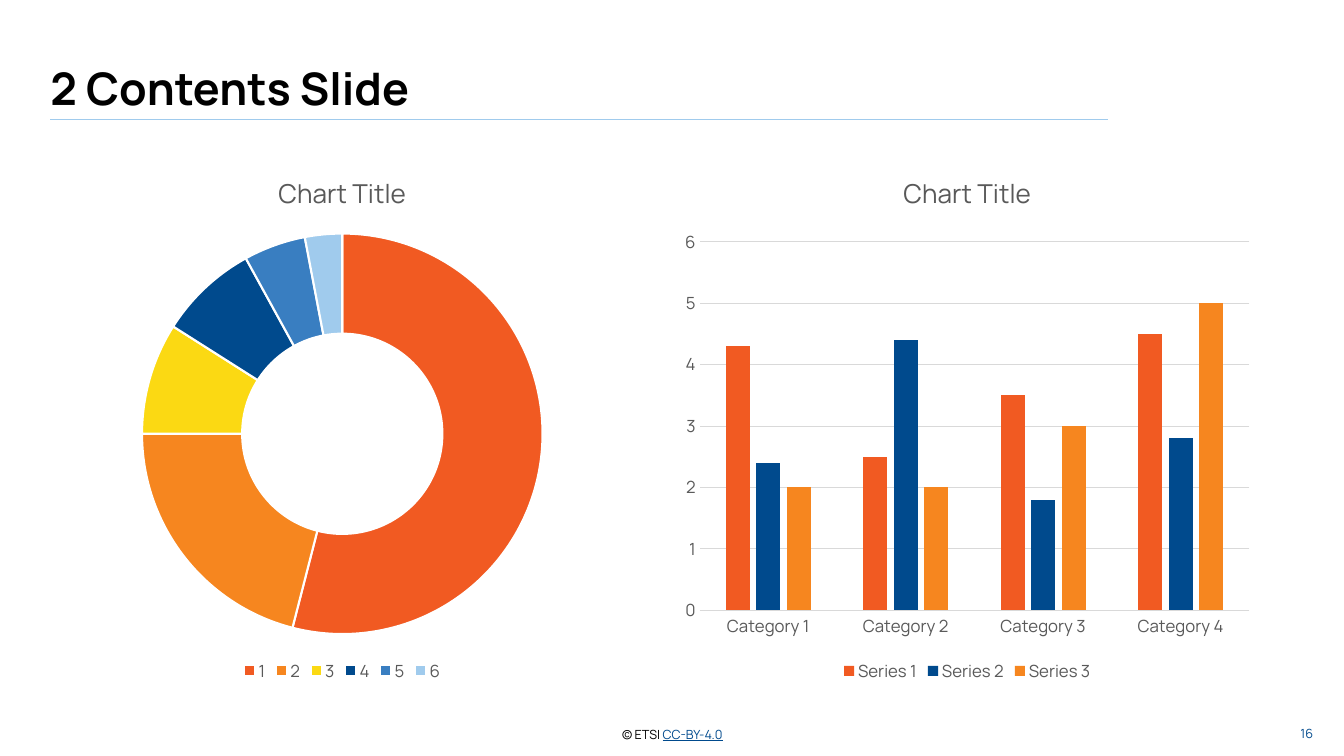
from lxml import etree
from pptx import Presentation
from pptx.chart.data import CategoryChartData
from pptx.dml.color import RGBColor
from pptx.enum.chart import XL_CHART_TYPE, XL_LEGEND_POSITION, XL_TICK_MARK
from pptx.enum.shapes import MSO_CONNECTOR
from pptx.enum.text import MSO_ANCHOR, PP_ALIGN
from pptx.oxml.ns import qn
from pptx.util import Pt

DOUGHNUT = XL_CHART_TYPE.DOUGHNUT
COLUMNS = XL_CHART_TYPE.COLUMN_CLUSTERED
LEGEND_BOTTOM = XL_LEGEND_POSITION.BOTTOM
NO_TICKS = XL_TICK_MARK.NONE
STRAIGHT = MSO_CONNECTOR.STRAIGHT
TOP, MIDDLE, BOTTOM = MSO_ANCHOR.TOP, MSO_ANCHOR.MIDDLE, MSO_ANCHOR.BOTTOM
LEFT, CENTER, RIGHT = PP_ALIGN.LEFT, PP_ALIGN.CENTER, PP_ALIGN.RIGHT

FONT = "Manrope"
COLORS = {
    "black": "000000",
    "white": "FFFFFF",
    "label": "595959",
    "grid": "D9D9D9",
    "red": "F15A22",
    "orange": "F6861F",
    "yellow": "FBD913",
    "navy": "004A8D",
    "blue": "397EC1",
    "sky": "A0CBED",
}
SHARES = {
    "1": (54, "red"),
    "2": (21, "orange"),
    "3": (9, "yellow"),
    "4": (8, "navy"),
    "5": (5, "blue"),
    "6": (3, "sky"),
}
CATEGORIES = ["Category 1", "Category 2", "Category 3", "Category 4"]
SERIES = {
    "Series 1": ((4.3, 2.5, 3.5, 4.5), "red"),
    "Series 2": ((2.4, 4.4, 1.8, 2.8), "navy"),
    "Series 3": ((2, 2, 3, 5), "orange"),
}


def rgb(name):
    return RGBColor.from_string(COLORS[name])


def set_font(font, size, color, bold=False):
    font.name = FONT
    font.size = Pt(size)
    font.bold = bold
    font.color.rgb = rgb(color)


def add_text(slide, box, text, size, color, align, anchor, bold=False):
    frame = slide.shapes.add_textbox(*map(Pt, box)).text_frame
    frame.word_wrap = True
    frame.margin_left = frame.margin_right = 0
    frame.margin_top = frame.margin_bottom = 0
    frame.vertical_anchor = anchor
    paragraph = frame.paragraphs[0]
    paragraph.alignment = align
    set_font(paragraph.font, size, color, bold)
    paragraph.add_run().text = text
    return paragraph


def add_header(slide, box):
    left, top, width, height = box
    title = add_text(slide, box, "2 Contents Slide", 32, "black", LEFT, BOTTOM, True)
    title.line_spacing = 0.9
    rule_y = top + height + 3.6
    rule = slide.shapes.add_connector(
        STRAIGHT, Pt(left), Pt(rule_y), Pt(left + width - 30.25), Pt(rule_y)
    )
    rule.line.color.rgb = rgb("sky")
    rule.line.width = Pt(0.75)
    etree.SubElement(rule._element.spPr, qn("a:effectLst"))


def add_footer(slide, box):
    left, top, width, height = box
    notice_box = (left + 403.2, top + 4.3, 82, 11)
    notice = add_text(slide, notice_box, "© ETSI ", 9, "black", CENTER, TOP)
    licence = notice.add_run()
    licence.text = "CC-BY-4.0"
    licence.font.underline = True
    licence.font.color.rgb = rgb("navy")
    number_box = (left + width - 28, top, 28, height)
    add_text(slide, number_box, "16", 9, "navy", RIGHT, MIDDLE)


def add_titled_chart(slide, box, kind, data):
    chart = slide.shapes.add_chart(kind, *map(Pt, box), data).chart
    set_font(chart.font, 10, "black")
    chart.has_title = True
    title = chart.chart_title.text_frame.paragraphs[0]
    set_font(title.font, 18.6, "label")
    title.add_run().text = "Chart Title"
    chart.chart_title.include_in_layout = False
    chart.has_legend = True
    chart.legend.position = LEGEND_BOTTOM
    chart.legend.include_in_layout = False
    set_font(chart.legend.font, 12, "label")
    return chart


def add_share_chart(slide, box):
    data = CategoryChartData()
    data.categories = list(SHARES)
    data.add_series("Chart Title", [value for value, _ in SHARES.values()])
    plot = add_titled_chart(slide, box, DOUGHNUT, data).plots[0]
    plot.vary_by_categories = True
    plot._element.find(qn("c:holeSize")).set("val", "87")
    for index, (_, color) in enumerate(SHARES.values()):
        slice_format = plot.series[0].points[index].format
        slice_format.fill.solid()
        slice_format.fill.fore_color.rgb = rgb(color)
        slice_format.line.color.rgb = rgb("white")
        slice_format.line.width = Pt(1.5)


def add_category_chart(slide, box):
    data = CategoryChartData()
    data.categories = CATEGORIES
    for name, (values, _) in SERIES.items():
        data.add_series(name, values)
    chart = add_titled_chart(slide, box, COLUMNS, data)
    plot = chart.plots[0]
    plot.vary_by_categories = False
    plot.gap_width = 219
    plot.overlap = -27
    for series, (_, color) in zip(plot.series, SERIES.values()):
        series.format.fill.solid()
        series.format.fill.fore_color.rgb = rgb(color)
        series.invert_if_negative = False
    for axis in (chart.category_axis, chart.value_axis):
        axis.major_tick_mark = axis.minor_tick_mark = NO_TICKS
        set_font(axis.tick_labels.font, 12, "label")
    chart.value_axis.has_major_gridlines = True
    chart.value_axis.format.line.fill.background()
    for line in (
        chart.category_axis.format.line,
        chart.value_axis.major_gridlines.format.line,
    ):
        line.color.rgb = rgb("grid")
        line.width = Pt(0.75)


def main():
    deck = Presentation()
    deck.slide_width, deck.slide_height = Pt(960), Pt(540)
    slide = deck.slides.add_slide(deck.slide_layouts[6])
    add_header(slide, (36, 41, 785.5, 41))
    add_share_chart(slide, (36, 108, 417, 382.3))
    add_category_chart(slide, (481, 108, 419.8, 382.3))
    add_footer(slide, (36, 514.8, 902, 18.7))
    deck.save("out.pptx")


if __name__ == "__main__":
    main()
